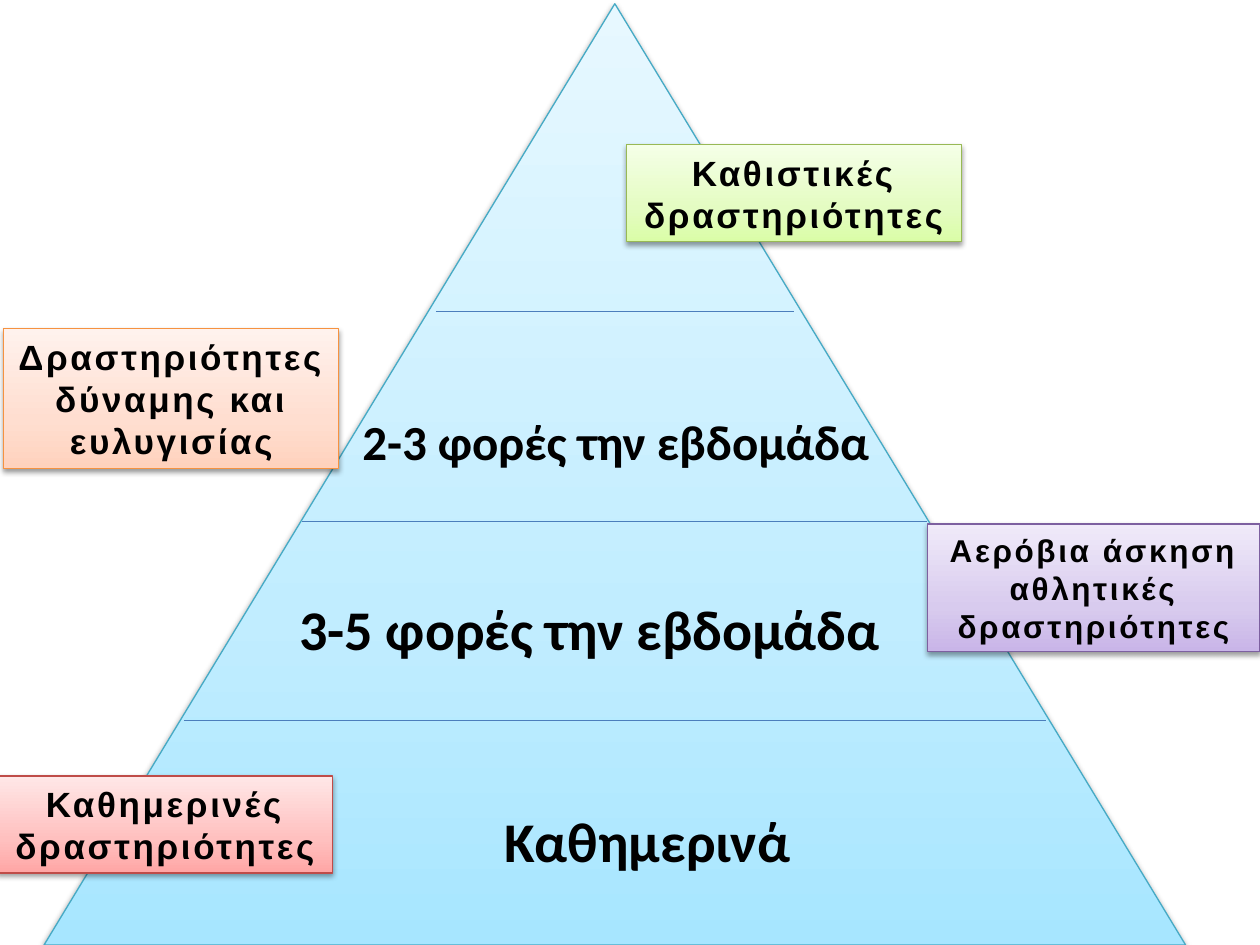
"""Build the physical activity pyramid slide."""
import pptx
import pptx.dml.color
import pptx.enum.shapes
import pptx.enum.text
import pptx.oxml
import pptx.oxml.ns
import pptx.util
from lxml import etree

SLIDE_W, SLIDE_H = 10, 7.5
COLORS = {"text": "000000", "divider": "4B7EBC"}
THEMES = {
    "aqua": ("46AAC5", ("A7E6FF", "C1EDFF", "E7F8FF")),
    "red": ("BF4C48", ("FFA6A5", "FFC0BF", "FFE7E7")),
    "purple": ("7D60A0", ("C9B5E8", "D8CBEE", "F0EAF9")),
    "orange": ("F69240", ("FFD2BD", "FFDED0", "FFF2ED")),
    "green": ("98B955", ("DAFDA7", "E4FCC2", "F5FFE7")),
}
GRADIENT_STOPS = (0, 35, 100)
PYRAMID = (0.35, 0.03, 9.06, 7.47)
AXIS = PYRAMID[0] + PYRAMID[2] / 2
DIVIDERS = [(5.72, 3.42), (4.14, 2.48), (2.47, 1.42)]
ACTIVITIES = [
    ("Καθημερινές δραστηριότητες", "red", 20, (-0.02, 6.16, 2.66, 0.77)),
    ("Αερόβια άσκηση αθλητικές δραστηριότητες", "purple", 18, (7.36, 4.16, 2.64, 1.01)),
    ("Δραστηριότητες\vδύναμης και ευλυγισίας", "orange", 20, (0.03, 2.61, 2.66, 1.11)),
    ("Καθιστικές δραστηριότητες", "green", 20, (4.97, 1.15, 2.66, 0.77)),
]
FREQUENCIES = [
    ("3-5 φορές την εβδομάδα", 32, (2.24, 4.67, 4.88, 0.64)),
    ("2-3 φορές την εβδομάδα", 28, (2.64, 3.22, 4.49, 0.57)),
    ("Καθημερινά", 32, (2.28, 6.35, 5.72, 0.64)),
]


def rgb(value):
    return pptx.dml.color.RGBColor.from_string(value)


def inches(values):
    return [pptx.util.Inches(value) for value in values]


def child(parent, tag, **attributes):
    return etree.SubElement(parent, pptx.oxml.ns.qn(tag), attributes)


def add_glossy(slide, kind, box, theme):
    outline, shades = THEMES[theme]
    shape = slide.shapes.add_shape(kind, *inches(box))
    shape.line.color.rgb = rgb(outline)
    shape.line.width = pptx.util.Pt(0.75)
    shape.fill.gradient()
    shape.fill.gradient_angle = 90
    properties = shape.element.spPr
    stops = properties.find(".//" + pptx.oxml.ns.qn("a:gsLst"))
    for stop in list(stops):
        stops.remove(stop)
    for position, shade in zip(GRADIENT_STOPS, shades):
        stop = child(stops, "a:gs", pos=str(position * 1000))
        child(stop, "a:srgbClr", val=shade)
    shape.shadow.inherit = False
    effects = properties.find(pptx.oxml.ns.qn("a:effectLst"))
    shadow = child(effects, "a:outerShdw", blurRad=str(pptx.util.Pt(3.1)),
                   dist=str(pptx.util.Pt(1.6)), dir="5400000", rotWithShape="0")
    child(child(shadow, "a:srgbClr", val="000000"), "a:alpha", val="38000")
    return shape


def write(shape, text, size, font):
    frame = shape.text_frame
    frame.word_wrap = True
    frame.auto_size = pptx.enum.text.MSO_AUTO_SIZE.SHAPE_TO_FIT_TEXT
    paragraph = frame.paragraphs[0]
    paragraph.text = text
    paragraph.alignment = pptx.enum.text.PP_ALIGN.CENTER
    paragraph.font.name = font
    paragraph.font.size = pptx.util.Pt(size)
    paragraph.font.bold = True
    paragraph.font.color.rgb = rgb(COLORS["text"])
    return paragraph


def add_divider(slide, y, half_width):
    divider = slide.shapes.add_connector(
        pptx.enum.shapes.MSO_CONNECTOR.STRAIGHT,
        *inches((AXIS - half_width, y, AXIS + half_width, y)))
    divider.line.color.rgb = rgb(COLORS["divider"])
    divider.line.width = pptx.util.Pt(0.75)
    child(divider.element.spPr, "a:effectLst")


def main():
    deck = pptx.Presentation()
    deck.slide_width, deck.slide_height = inches((SLIDE_W, SLIDE_H))
    slide = deck.slides.add_slide(deck.slide_layouts[6])
    shapes = pptx.enum.shapes.MSO_SHAPE
    add_glossy(slide, shapes.ISOSCELES_TRIANGLE, PYRAMID, "aqua")
    for y, half_width in DIVIDERS:
        add_divider(slide, y, half_width)
    for text, theme, size, box in ACTIVITIES:
        label = add_glossy(slide, shapes.RECTANGLE, box, theme)
        paragraph = write(label, text, size, "Arial")
        for run in paragraph.runs:
            run.font.bold = True
            run.font._element.set("spc", "150")
    for text, size, box in FREQUENCIES:
        write(slide.shapes.add_textbox(*inches(box)), text, size, "Calibri")
    deck.save("out.pptx")


if __name__ == "__main__":
    main()
